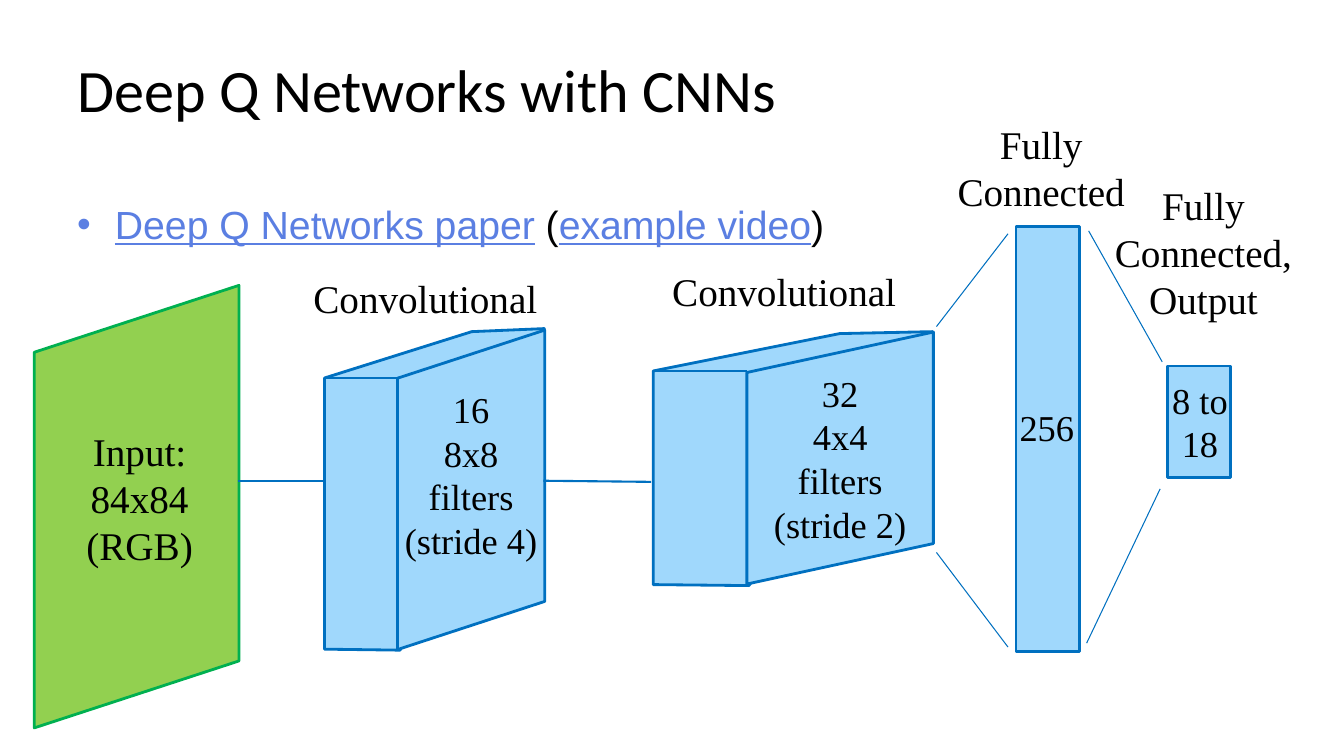
from lxml.etree import SubElement
from pptx import Presentation
from pptx.dml.color import RGBColor
from pptx.enum.shapes import MSO_CONNECTOR, MSO_SHAPE
from pptx.enum.text import MSO_ANCHOR, PP_ALIGN
from pptx.oxml.ns import qn
from pptx.util import Pt

BLACK = RGBColor(0x00, 0x00, 0x00)
LINK = RGBColor(0x5B, 0x7F, 0xE2)
GREEN = RGBColor(0x92, 0xD0, 0x50)
DARK_GREEN = RGBColor(0x00, 0xB0, 0x50)
LIGHT_BLUE = RGBColor(0xA0, 0xD8, 0xFC)
BLUE = RGBColor(0x00, 0x70, 0xC0)
SERIF = "Times New Roman"


def add_text(p, text, font=SERIF, size=28, color=BLACK, underline=False):
    """Add text to a paragraph; each newline becomes a line break."""
    for i, line in enumerate(text.split("\n")):
        if i:
            p.add_line_break()
        r = p.add_run()
        r.text = line
        r.font.name = font
        r.font.size = Pt(size)
        r.font.color.rgb = color
        r.font.underline = underline


def add_label(s, x, y, w, h, *paragraphs, size=28):
    tf = s.shapes.add_textbox(Pt(x), Pt(y), Pt(w), Pt(h)).text_frame
    tf.word_wrap = True
    for i, text in enumerate(paragraphs):
        p = tf.add_paragraph() if i else tf.paragraphs[0]
        p.alignment = PP_ALIGN.CENTER
        add_text(p, text, size=size)


def paint(sp, fill=LIGHT_BLUE, line=BLUE):
    sp.shadow.inherit = False
    sp.fill.solid()
    sp.fill.fore_color.rgb = fill
    sp.line.color.rgb = line
    sp.line.width = Pt(2)


def add_panel(s, x, y, w, h, slant, **colors):
    """Upright parallelogram whose visible bounds are x, y, w, h."""
    sp = s.shapes.add_shape(MSO_SHAPE.PARALLELOGRAM, Pt(x + (w - h) / 2),
                            Pt(y + (h - w) / 2), Pt(h), Pt(w))
    sp.adjustments[0] = slant
    sp.rotation = 90
    sp._element.spPr.xfrm.set("flipV", "1")
    paint(sp, **colors)


def add_layer(s, x, y, w, h):
    paint(s.shapes.add_shape(MSO_SHAPE.RECTANGLE, Pt(x), Pt(y), Pt(w), Pt(h)))


def add_line(s, x1, y1, x2, y2, width=1.5):
    c = s.shapes.add_connector(MSO_CONNECTOR.STRAIGHT, Pt(x1), Pt(y1), Pt(x2), Pt(y2))
    c.line.color.rgb = BLUE
    c.line.width = Pt(width)
    SubElement(c._element.spPr, qn("a:effectLst"))


def add_block(s, outline, panel, slant):
    """Convolutional block: side and top outline, front panel, top edge."""
    points = [(Pt(x), Pt(y)) for x, y in outline]
    builder = s.shapes.build_freeform(*points[0])
    builder.add_line_segments(points[1:], close=True)
    paint(builder.convert_to_shape())
    add_panel(s, *panel, slant)
    left, top = outline[1]
    add_line(s, left, top, panel[0], top)


def add_title(s, text):
    title = s.shapes.title
    title.left, title.top, title.width, title.height = Pt(48), Pt(18), Pt(894), Pt(90)
    tf = title.text_frame
    tf.vertical_anchor = MSO_ANCHOR.MIDDLE
    p = tf.paragraphs[0]
    p.alignment = PP_ALIGN.LEFT
    add_text(p, text, font="Calibri", size=43)


def add_links(s):
    tf = s.shapes.add_textbox(Pt(48), Pt(138), Pt(902), Pt(44)).text_frame
    tf.word_wrap = True
    p = tf.paragraphs[0]
    p.line_spacing = 1.05
    pPr = p._p.get_or_add_pPr()
    pPr.set("marL", str(Pt(27)))
    pPr.set("indent", str(-Pt(27)))
    color = SubElement(pPr, qn("a:buClr"))
    SubElement(color, qn("a:srgbClr"), val=str(LINK))
    SubElement(pPr, qn("a:buFont"), typeface="Arial")
    SubElement(pPr, qn("a:buChar"), char="•")
    for text, is_link in [("Deep Q Networks paper", True), (" (", False),
                          ("example video", True), (")", False)]:
        add_text(p, text, font="Arial", color=LINK if is_link else BLACK,
                 underline=is_link)


def main():
    prs = Presentation()
    prs.slide_width, prs.slide_height = Pt(960), Pt(540)
    s = prs.slides.add_slide(prs.slide_layouts[5])
    add_title(s, "Deep Q Networks with CNNs")
    add_links(s)

    add_panel(s, 24.5, 203.8, 146.2, 316.1, 0.327, fill=GREEN, line=DARK_GREEN)
    add_label(s, 11.5, 301.7, 176.4, 143.3, "Input:", "84x84\n(RGB)")

    add_block(s, [(337, 236.9), (231.8, 270), (231.8, 463.7), (285.8, 464.4),
                  (388.8, 234.7)], (284, 235.8, 105.1, 228.2), 0.327)
    add_label(s, 258.5, 272.9, 156.2, 151.2, "16\n8x8\nfilters\n(stride 4)", size=26)
    add_block(s, [(599.8, 238.3), (466.6, 265), (466.6, 417.6), (535, 418.3),
                  (666, 236.9)], (533.5, 237.2, 133.2, 180), 0.217)
    add_label(s, 538.6, 261.4, 123.1, 133.2, "32\n4x4\nfilters\n(stride 2)", size=26)
    for x, y in [(208.1, 192.2), (464.4, 187.2)]:
        add_label(s, x, y, 191.5, 41, "Convolutional")

    add_layer(s, 725.8, 162, 45.4, 303.1)
    add_label(s, 686.2, 285.8, 123.1, 38.9, "256", size=26)
    add_label(s, 648, 82.1, 191.5, 74.9, "Fully Connected")
    add_layer(s, 833.8, 261.4, 45.4, 79.9)
    add_label(s, 795.6, 266.4, 123.1, 70.6, "8 to", "18", size=26)
    add_label(s, 763.9, 126, 191.5, 108.7, "Fully Connected,", "Output")

    for ends in [(668.9, 233.3, 720, 167), (668.9, 394.6, 720, 462.2),
                 (777.6, 164.9, 830.2, 258.5), (776.2, 459.4, 828.7, 349.2)]:
        add_line(s, *ends, width=0.75)
    add_line(s, 169.9, 343.4, 231.8, 343.4)
    add_line(s, 388.1, 343.4, 465.1, 344.2)
    prs.save("out.pptx")


if __name__ == "__main__":
    main()
